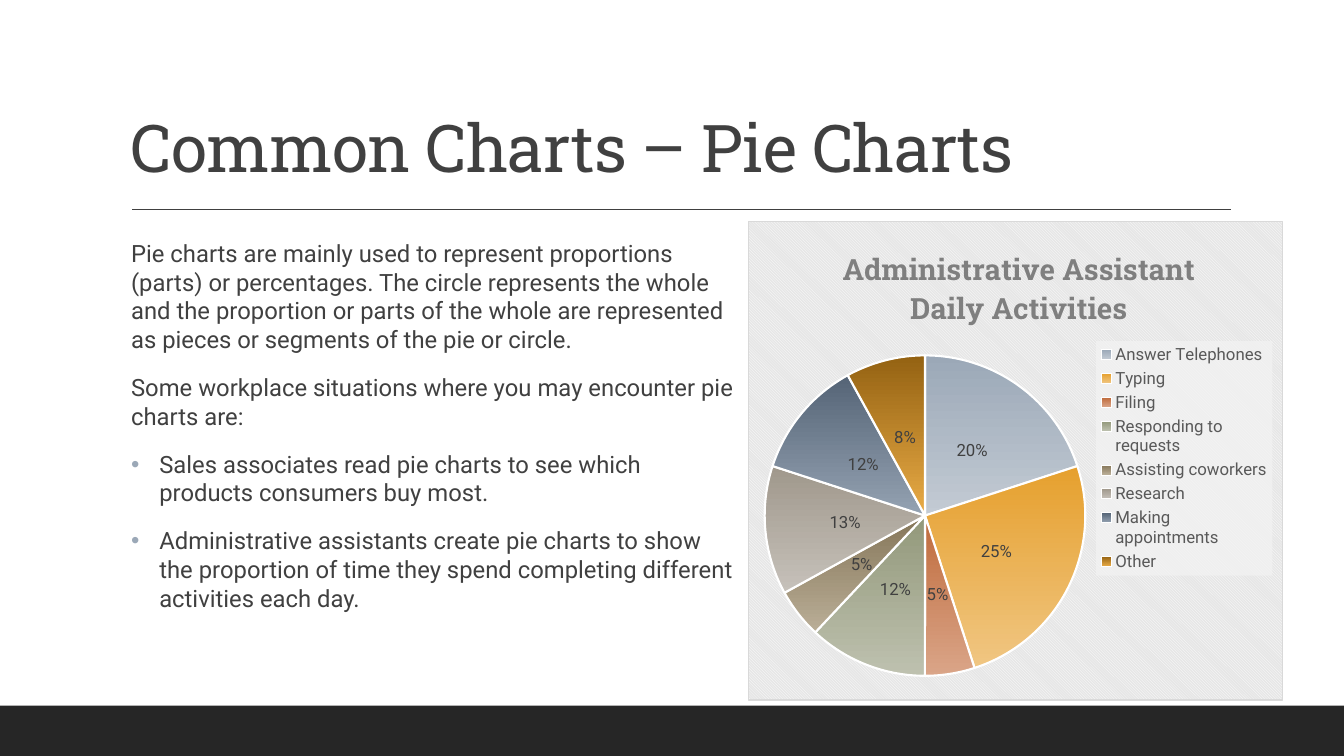
"""Build the slide that explains pie charts."""
from lxml.etree import SubElement
from pptx import Presentation
from pptx.chart.data import CategoryChartData
from pptx.dml.color import RGBColor
from pptx.enum.chart import XL_CHART_TYPE, XL_LABEL_POSITION, XL_LEGEND_POSITION
from pptx.enum.shapes import MSO_CONNECTOR, MSO_SHAPE
from pptx.enum.text import MSO_ANCHOR
from pptx.oxml import parse_xml
from pptx.oxml.ns import nsdecls, qn
from pptx.util import Inches, Pt

COLORS = {
    "text": "404040", "footer": "262626", "bullet": "9BA8B7", "title": "7F7F7F",
    "legend": "595959", "white": "FFFFFF",
}
ACTIVITIES = [
    ("Answer Telephones", 20, "9BA8B7", "C3CBD4"),
    ("Typing", 25, "E6A02E", "F0C682"),
    ("Filing", 5, "BF6A3B", "DAA588"),
    ("Responding to requests", 12, "92987A", "BEC1AF"),
    ("Assisting coworkers", 5, "857659", "BAAE97"),
    ("Research", 13, "A0988C", "C6C1BA"),
    ("Making appointments", 12, "556476", "94A2B2"),
    ("Other", 8, "946212", "E9AB46"),
]
PARAGRAPHS = [
    ("Pie charts are mainly used to represent proportions (parts) or percentages. "
     "The circle represents the whole and the proportion or parts of the whole are "
     "represented as pieces or segments of the pie or circle.", False),
    ("Some workplace situations where you may encounter pie charts are:", False),
    ("Sales associates read pie charts to see which products consumers buy most.", True),
    ("Administrative assistants create pie charts to show the proportion of time they "
     "spend completing different activities each day.", True),
]


def style(font, size, color, name="Roboto", bold=False):
    font.size, font.name, font.bold = Pt(size), name, bold
    font.color.rgb = RGBColor.from_string(color)


def place(parent, index, **shares):
    for old in parent.findall(qn("c:layout")):
        parent.remove(old)
    layout = parse_xml(f"<c:layout {nsdecls('c')}><c:manualLayout/></c:layout>")
    if "w" in shares and index == 0:
        SubElement(layout[0], qn("c:layoutTarget"), val="inner")
    for axis in "xy":
        SubElement(layout[0], qn(f"c:{axis}Mode"), val="edge")
    for side, share in shares.items():
        SubElement(layout[0], qn(f"c:{side}"), val=str(share))
    parent.insert(index, layout)


deck = Presentation()
deck.slide_width, deck.slide_height = Inches(13.33), Inches(7.5)
page = deck.slides.add_slide(deck.slide_layouts[6])

footer = page.shapes.add_shape(
    MSO_SHAPE.RECTANGLE, 0, Inches(7), deck.slide_width, Inches(0.5))
footer.shadow.inherit = False
footer.fill.solid()
footer.fill.fore_color.rgb = RGBColor.from_string(COLORS["footer"])
footer.line.fill.background()

rule = page.shapes.add_connector(
    MSO_CONNECTOR.STRAIGHT, Inches(1.31), Inches(2.08), Inches(12.21), Inches(2.08))
rule.line.width = Pt(1)
rule.line.color.rgb = RGBColor.from_string(COLORS["text"])
SubElement(rule._element.spPr, qn("a:effectLst"))

heading = page.shapes.add_textbox(Inches(1.2), Inches(0.31), Inches(11), Inches(1.59))
heading.text_frame.word_wrap = True
heading.text_frame.vertical_anchor = MSO_ANCHOR.BOTTOM
para = heading.text_frame.paragraphs[0]
para.line_spacing = 0.9
span = para.add_run()
span.text = "Common Charts – Pie Charts"
style(span.font, 47, COLORS["text"], "Roboto Slab")
span.font._element.set("spc", "-50")

body = page.shapes.add_textbox(Inches(1.2), Inches(2.32), Inches(6.11), Inches(4.5))
frame = body.text_frame
frame.word_wrap = True
frame.margin_left = frame.margin_right = 0
for number, (text, bulleted) in enumerate(PARAGRAPHS):
    para = frame.add_paragraph() if number else frame.paragraphs[0]
    para.text = text
    style(para.font, 17, COLORS["text"])
    para.space_before, para.space_after = Pt(12), Pt(2)
    properties = para._p.get_or_add_pPr()
    properties.set("marL", str(Inches(0.38 if bulleted else 0.1)))
    properties.set("indent", str(Inches(-0.28 if bulleted else 0)))
    if bulleted:
        marks = parse_xml(
            f'<a:pPr {nsdecls("a")}><a:buClr><a:srgbClr val="{COLORS["bullet"]}"/></a:buClr>'
            '<a:buFont typeface="Arial"/><a:buChar char="•"/></a:pPr>')
        for mark in list(marks):
            properties.find(qn("a:defRPr")).addprevious(mark)

data = CategoryChartData(number_format="0")
data.categories = [activity[0] for activity in ACTIVITIES]
data.add_series("Series 1", [activity[1] for activity in ACTIVITIES])
chart = page.shapes.add_chart(
    XL_CHART_TYPE.PIE, Inches(7.42), Inches(2.19), Inches(5.31), Inches(4.76), data).chart
style(chart.font, 10, "000000")

chart.has_title = True
chart.chart_title.text_frame.text = "Administrative Assistant\nDaily Activities"
for para in chart.chart_title.text_frame.paragraphs:
    style(para.font, 21, COLORS["title"], "Roboto Slab", True)
place(chart.chart_title._element, 1, x=0.17, y=0.05)

chart.has_legend = True
legend = chart.legend
legend.position = XL_LEGEND_POSITION.RIGHT
legend.include_in_layout = False
style(legend.font, 12, COLORS["legend"])
place(legend._element, 1, x=0.65, y=0.25, w=0.33, h=0.49)
legend._element.find(qn("c:txPr")).addprevious(parse_xml(
    f'<c:spPr {nsdecls("c", "a")}><a:solidFill><a:srgbClr val="F2F2F2">'
    '<a:alpha val="78000"/></a:srgbClr></a:solidFill></c:spPr>'))

chart_space = chart._chartSpace
chart_space.chart.addnext(parse_xml(
    f'<c:spPr {nsdecls("c", "a")}><a:pattFill prst="dkDnDiag">'
    '<a:fgClr><a:srgbClr val="FFFFFF"/></a:fgClr><a:bgClr><a:srgbClr val="E6E6E6"/></a:bgClr>'
    '</a:pattFill><a:ln w="9525"><a:solidFill><a:srgbClr val="D9D9D9"/></a:solidFill></a:ln>'
    '</c:spPr>'))
place(chart_space.chart.plotArea, 0, x=0.03, y=0.28, w=0.6, h=0.67)

plot = chart.plots[0]
plot.vary_by_categories = True
plot.has_data_labels = True
labels = plot.data_labels
labels.show_percentage, labels.show_value = True, False
labels.number_format, labels.number_format_is_linked = "0%", False
labels.position = XL_LABEL_POSITION.CENTER
style(labels.font, 12, COLORS["text"])
for number, (_, _, top, bottom) in enumerate(ACTIVITIES):
    piece = plot.series[0].points[number].format
    piece.fill.gradient()
    piece.fill.gradient_angle = 270
    for stop, color in zip(piece.fill.gradient_stops, (top, bottom)):
        stop.color.rgb = RGBColor.from_string(color)
    piece.line.width = Pt(1.5)
    piece.line.color.rgb = RGBColor.from_string(COLORS["white"])

deck.save("out.pptx")
